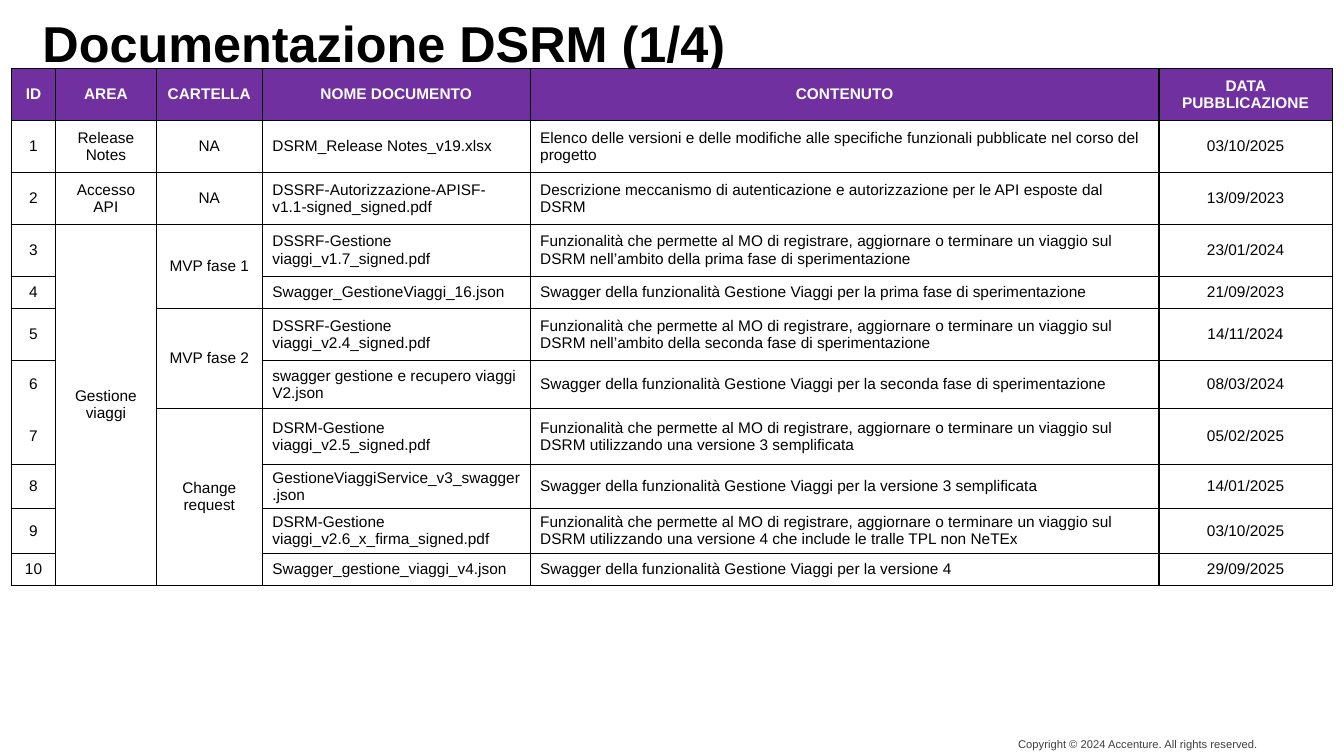
from lxml import etree
from pptx import Presentation
from pptx.dml.color import RGBColor
from pptx.enum.text import MSO_ANCHOR, MSO_AUTO_SIZE, PP_ALIGN
from pptx.oxml.ns import qn
from pptx.util import Cm, Pt

LEFT, CENTER, RIGHT = PP_ALIGN.LEFT, PP_ALIGN.CENTER, PP_ALIGN.RIGHT
MIDDLE = MSO_ANCHOR.MIDDLE
NO_AUTOFIT = MSO_AUTO_SIZE.NONE
BLACK, WHITE, PURPLE, GRAY = "000000", "FFFFFF", "7030A0", "404040"

COLUMN_WIDTHS = [1.11, 2.54, 2.67, 6.75, 15.85, 4.36]
ROW_HEIGHTS = [1.31, 1.31, 1.31, 1.31, 0.81, 1.31, 1.21, 0, 1.41, 1.11, 1.11, 0.81]
CENTERED_COLUMNS = {0, 1, 2, 5}
ROW_SPANS = [(3, 1, 9), (3, 2, 2), (5, 2, 3), (8, 2, 4),
             (6, 3, 2), (6, 4, 2), (6, 5, 2), (7, 0, 2)]
OPEN_EDGES = {(6, 0, "lnB"), (7, 0, "lnT")}

TRIP = "Funzionalità che permette al MO di registrare, aggiornare o terminare un viaggio sul DSRM "
SWAGGER = "Swagger della funzionalità Gestione Viaggi per la "
ROWS = [
    ("ID", "AREA", "CARTELLA", "NOME DOCUMENTO", "CONTENUTO", "DATA PUBBLICAZIONE"),
    ("1", "Release Notes", "NA", "DSRM_Release Notes_v19.xlsx",
     "Elenco delle versioni e delle modifiche alle specifiche funzionali "
     "pubblicate nel corso del progetto", "03/10/2025"),
    ("2", "Accesso API", "NA", "DSSRF-Autorizzazione-APISF-v1.1-signed_signed.pdf",
     "Descrizione meccanismo di autenticazione e autorizzazione "
     "per le API esposte dal DSRM", "13/09/2023"),
    ("3", "Gestione viaggi", "MVP fase 1", "DSSRF-Gestione viaggi_v1.7_signed.pdf",
     TRIP + "nell’ambito della prima fase di sperimentazione", "23/01/2024"),
    ("4", "", "", "Swagger_GestioneViaggi_16.json",
     SWAGGER + "prima fase di sperimentazione", "21/09/2023"),
    ("5", "", "MVP fase 2", "DSSRF-Gestione viaggi_v2.4_signed.pdf",
     TRIP + "nell’ambito della seconda fase di sperimentazione", "14/11/2024"),
    ("6", "", "", "swagger gestione e recupero viaggi V2.json",
     SWAGGER + "seconda fase di sperimentazione", "08/03/2024"),
    ("7", "", "", "", "", ""),
    ("", "", "Change request", "DSRM-Gestione viaggi_v2.5_signed.pdf",
     TRIP + "utilizzando una versione 3 semplificata", "05/02/2025"),
    ("8", "", "", "GestioneViaggiService_v3_swagger.json",
     SWAGGER + "versione 3 semplificata", "14/01/2025"),
    ("9", "", "", "DSRM-Gestione viaggi_v2.6_x_firma_signed.pdf",
     TRIP + "utilizzando una versione 4 che include le tralle TPL non NeTEx", "03/10/2025"),
    ("10", "", "", "Swagger_gestione_viaggi_v4.json",
     SWAGGER + "versione 4", "29/09/2025"),
]


def color(value):
    return RGBColor.from_string(value)


def write(frame, text, size=11, fill=BLACK, bold=False, align=LEFT):
    para = frame.paragraphs[0]
    para.alignment = align
    span = para.add_run()
    span.text = text
    span.font.name = "Arial"
    span.font.size = Pt(size)
    span.font.bold = bold
    span.font.color.rgb = color(fill)


deck = Presentation()
deck.slide_width, deck.slide_height = Cm(33.87), Cm(19.05)
page = deck.slides.add_slide(deck.slide_layouts[5])

title = page.shapes.title
title.left, title.top, title.width, title.height = Cm(1.07), Cm(0.13), Cm(31.75), Cm(1.85)
copyright_box = page.shapes.add_textbox(Cm(24.59), Cm(18.47), Cm(7.11), Cm(0.56))
for box in (title, copyright_box):
    frame = box.text_frame
    frame.margin_left = frame.margin_top = frame.margin_right = frame.margin_bottom = 0
    frame.word_wrap = True
    frame.auto_size = NO_AUTOFIT
    frame.vertical_anchor = MIDDLE
write(title.text_frame, "Documentazione DSRM (1/4)", size=36, bold=True)
write(copyright_box.text_frame, "Copyright © 2024 Accenture. All rights reserved.",
      size=8, fill=GRAY, align=RIGHT)

table = page.shapes.add_table(len(ROWS), len(COLUMN_WIDTHS), Cm(0.29), Cm(1.72),
                              Cm(sum(COLUMN_WIDTHS)), Cm(sum(ROW_HEIGHTS))).table
table.first_row = table.horz_banding = False
for column, width in zip(table.columns, COLUMN_WIDTHS):
    column.width = Cm(width)
for row, height in zip(table.rows, ROW_HEIGHTS):
    row.height = Cm(height)
for top, column, count in ROW_SPANS:
    table.cell(top, column).merge(table.cell(top + count - 1, column))

for row, values in enumerate(ROWS):
    header = row == 0
    for column, text in enumerate(values):
        cell = table.cell(row, column)
        properties = cell._tc.get_or_add_tcPr()
        for edge in ("lnL", "lnR", "lnT", "lnB"):
            line = etree.SubElement(properties, qn("a:" + edge), w=str(Pt(1)))
            if (row, column, edge) in OPEN_EDGES:
                etree.SubElement(line, qn("a:noFill"))
            else:
                solid = etree.SubElement(line, qn("a:solidFill"))
                etree.SubElement(solid, qn("a:srgbClr"), val=BLACK)
        cell.fill.solid()
        cell.fill.fore_color.rgb = color(PURPLE if header else WHITE)
        cell.vertical_anchor = MIDDLE
        if text:
            write(cell.text_frame, text, fill=WHITE if header else BLACK, bold=header,
                  align=CENTER if header or column in CENTERED_COLUMNS else LEFT)

deck.save("out.pptx")
